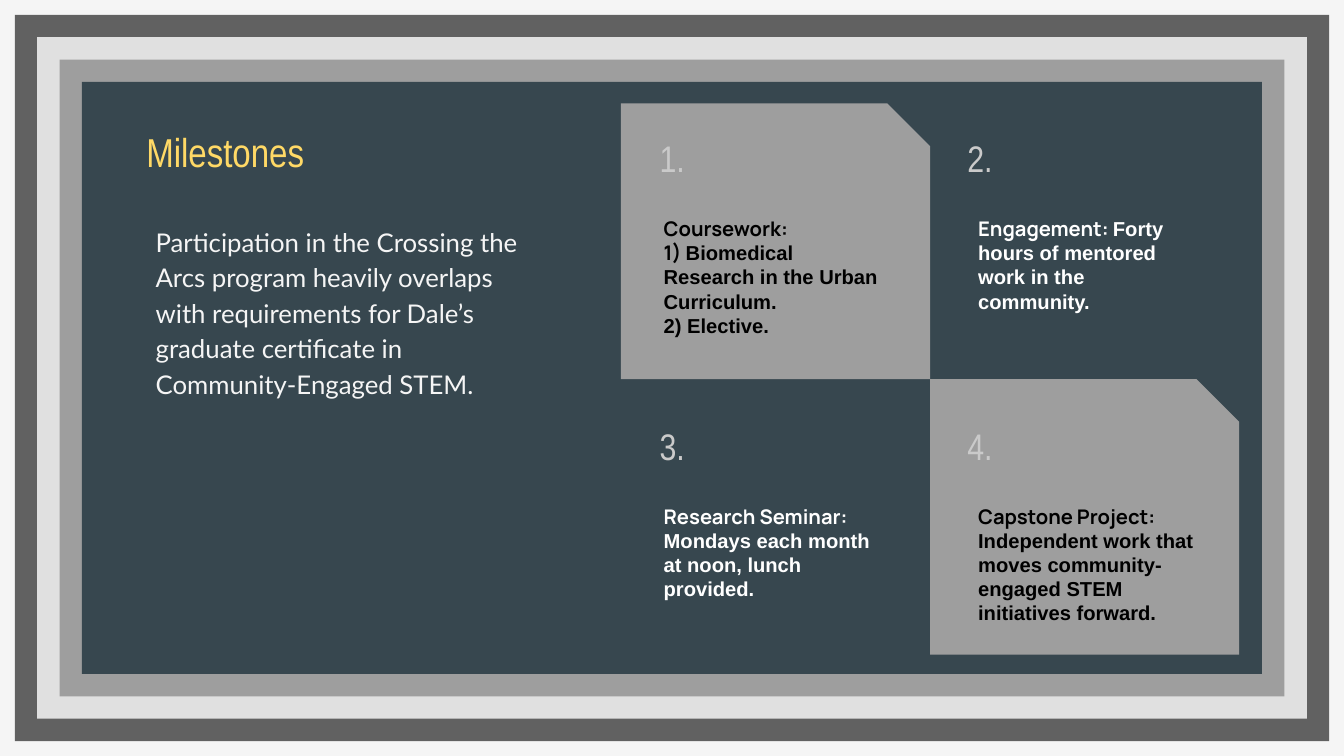
from pptx import Presentation
from pptx.dml.color import RGBColor
from pptx.enum.shapes import MSO_SHAPE
from pptx.util import Inches, Pt

W = 10
H = W * 9 / 16
SLATE, GREY, PALE = "37474F", "9E9E9E", "F5F5F5"
FRAMES = ["616161", "E0E0E0", GREY, SLATE]

TITLE = {"size": 21.6, "name": "Arial Narrow", "color": "FFD966"}
INTRO = {"size": 13.8, "name": "Lato", "color": PALE}
NUMBER = {"size": 19.8, "name": "Arial Narrow", "color": "CACACA"}
HEADING = {"size": 10.8, "name": "Manrope", "bold": True}
DETAIL = {**HEADING, "name": "Arial"}

# Each milestone is a list of paragraphs, each a list of (text, format) runs.
MILESTONES = [
    [[("Coursework:", HEADING)],
     [("1) ", HEADING), ("Biomedical Research in the Urban Curriculum.", DETAIL)],
     [("2) Elective.", DETAIL)]],
    [[("Engagement: ", HEADING),
      ("Forty hours of mentored work in the community.", DETAIL)]],
    [[("Research Seminar: ", HEADING),
      ("Mondays each month at noon, lunch provided.", DETAIL)]],
    [[("Capstone Project: ", HEADING),
      ("Independent work that moves community-engaged STEM initiatives forward.",
       DETAIL)]],
]


def rgb(value):
    return RGBColor.from_string(value)


def add_panel(s, box, color, kind=MSO_SHAPE.RECTANGLE):
    sp = s.shapes.add_shape(kind, *map(Inches, box))
    sp.shadow.inherit = False
    sp.fill.solid()
    sp.fill.fore_color.rgb = rgb(color)
    sp.line.fill.background()
    return sp


def add_text(s, box, paragraphs, spacing=None, **extra):
    tf = s.shapes.add_textbox(*map(Inches, box)).text_frame
    tf.word_wrap = True
    for side in ("left", "top", "right", "bottom"):
        setattr(tf, f"margin_{side}", Inches(0.1))
    for i, runs in enumerate(paragraphs):
        p = tf.add_paragraph() if i else tf.paragraphs[0]
        p.line_spacing = spacing
        for text, style in runs:
            r = p.add_run()
            r.text = text
            for key, value in {**style, **extra}.items():
                if key == "color":
                    r.font.color.rgb = rgb(value)
                else:
                    setattr(r.font, key, Pt(value) if key == "size" else value)


def add_frames(s, box):
    """Nest the coloured rectangles with an equal step between them."""
    x, y, w, h = box
    for i, color in enumerate(FRAMES):
        d = 0.11 + i / 6
        add_panel(s, (x + d, y + d, w - 2 * d, h - 2 * d), color)


def add_intro(s, box):
    x, y, w, h = box
    add_text(s, (x, y, w, 0.24 * h), [[("Milestones", TITLE)]])
    add_text(s, (x + 0.07, y + 0.7, 3, 0.8 * h), [[(
        "Participation in the Crossing the Arcs program heavily overlaps with "
        "requirements for Dale’s graduate certificate in "
        "Community-Engaged STEM.", INTRO)]], spacing=1.15)


def add_milestones(s, box):
    """Checkerboard of two columns and two rows; diagonal cells get a card."""
    x, y, w, h = box
    cw, rh = w / 2, h / 2
    for i, paragraphs in enumerate(MILESTONES):
        row, col = divmod(i, 2)
        filled = row == col
        if filled:
            card = add_panel(s, (x + col * cw, y + row * rh, cw, rh), GREY,
                             MSO_SHAPE.SNIP_1_RECTANGLE)
            card.adjustments[0] = 0.155
        top = y + row * (rh + 0.09)
        add_text(s, (x + 0.19 + col * (cw - 0.01), top + 0.14, 1.9, 0.5),
                 [[(f"{i + 1}.", NUMBER)]])
        add_text(s, (x + 0.22 + col * (cw + 0.04), top + 0.74, 1.86, 0.84),
                 paragraphs, color="000000" if filled else "FFFFFF")


def main():
    prs = Presentation()
    prs.slide_width, prs.slide_height = Inches(W), Inches(H)
    s = prs.slides.add_slide(prs.slide_layouts[6])
    s.background.fill.solid()
    s.background.fill.fore_color.rgb = rgb(PALE)
    add_frames(s, (0, 0, W, H))
    add_intro(s, (0.99, 0.85, 3.13, 3.7))
    add_milestones(s, (4.62, 0.77, 4.6, 4.1))
    prs.save("out.pptx")


if __name__ == "__main__":
    main()
